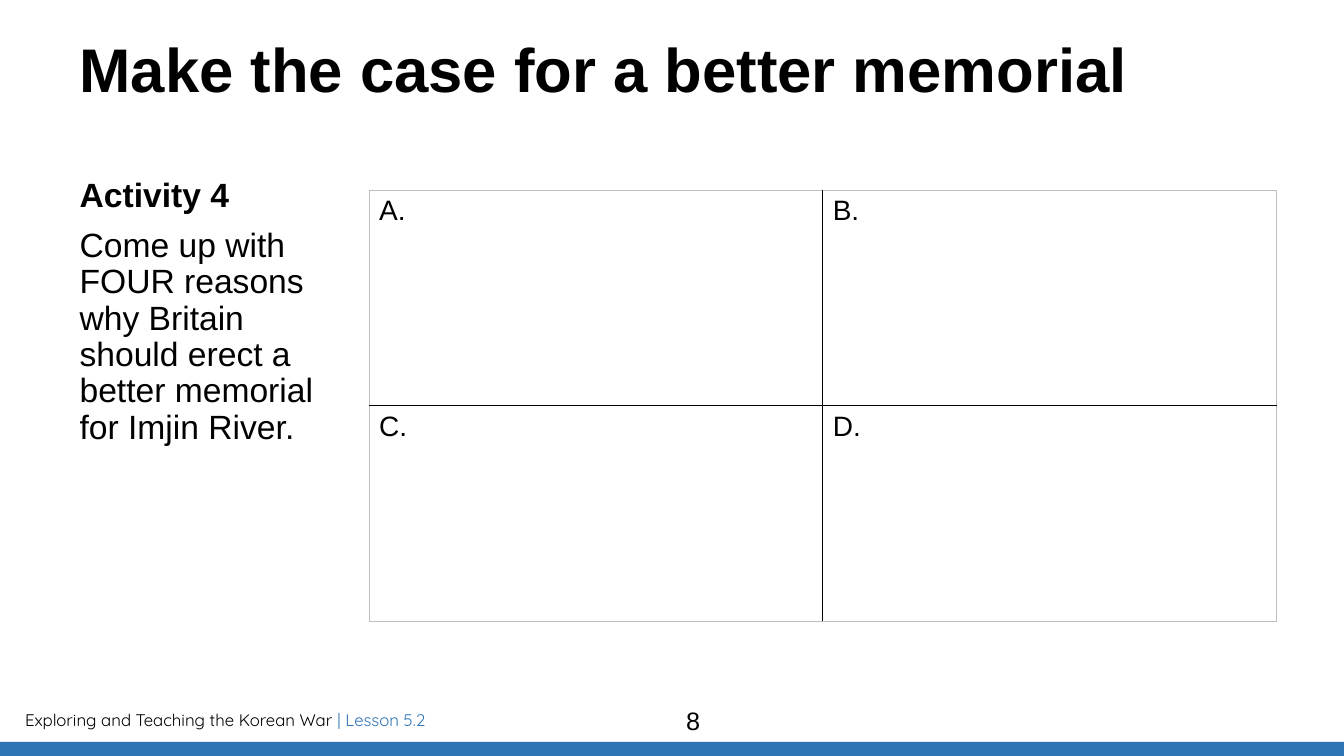
import dataclasses

import pptx
import pptx.dml.color
import pptx.enum.shapes
import pptx.enum.text
import pptx.oxml
import pptx.oxml.ns
import pptx.util

Inches = pptx.util.Inches
Pt = pptx.util.Pt
BLACK, BLUE, GREY = "000000", "2E75B6", "BFBFBF"


@dataclasses.dataclass(frozen=True)
class Area:
    left: float
    top: float
    width: float
    height: float

    def lengths(self) -> tuple:
        return tuple(Inches(n) for n in dataclasses.astuple(self))


TITLE = Area(0.79, 0.39, 11.5, 1.45)
ACTIVITY = Area(0.79, 1.77, 2.33, 4.76)
GRID = Area(3.66, 1.89, 9, 4.27)
FOOTER = Area(0.15, 6.99, 4.35, 0.3)
FOOTER_BAR = Area(0, 7.36, 13.33, 0.14)
PAGE_NUMBER = Area(4.34, 6.95, 5.07, 0.4)
REASONS = [["A.", "B."], ["C.", "D."]]


def colour(value: str):
    return pptx.dml.color.RGBColor.from_string(value)


def add_span(para, text: str, *, size: float, font: str = "Arial",
             color: str = BLACK, bold: bool = False) -> None:
    span = para.add_run()
    span.text = text
    span.font.size = Pt(size)
    span.font.name = font
    span.font.bold = bold
    span.font.color.rgb = colour(color)


def prepare_frame(frame, inset: bool = True) -> None:
    frame.word_wrap = True
    frame.auto_size = pptx.enum.text.MSO_AUTO_SIZE.NONE
    frame.vertical_anchor = pptx.enum.text.MSO_ANCHOR.TOP
    if not inset:
        frame.margin_left = frame.margin_right = 0
        frame.margin_top = frame.margin_bottom = 0


def add_box(page, area: Area, inset: bool = True):
    frame = page.shapes.add_textbox(*area.lengths()).text_frame
    prepare_frame(frame, inset)
    return frame


def set_border(cell, side: str, color: str, width: float) -> None:
    line = pptx.oxml.parse_xml(
        f'<a:{side} {pptx.oxml.ns.nsdecls("a")} w="{Pt(width)}">'
        f'<a:solidFill><a:srgbClr val="{color}"/></a:solidFill></a:{side}>')
    cell._tc.get_or_add_tcPr().append(line)


def add_title(page) -> None:
    title = page.shapes.title
    title.left, title.top, title.width, title.height = TITLE.lengths()
    prepare_frame(title.text_frame, inset=False)
    para = title.text_frame.paragraphs[0]
    para.alignment = pptx.enum.text.PP_ALIGN.LEFT
    para.line_spacing = 0.9
    add_span(para, "Make the case for a better memorial", size=44, bold=True)


def add_activity(page) -> None:
    frame = add_box(page, ACTIVITY, inset=False)
    heading, task = frame.paragraphs[0], frame.add_paragraph()
    heading.line_spacing = task.line_spacing = 0.9
    task.space_before = Pt(10)
    add_span(heading, "Activity 4", size=24, bold=True)
    add_span(task, "Come up with FOUR reasons why Britain should erect a "
             "better memorial for Imjin River.", size=24)


def add_reason_grid(page) -> None:
    rows, columns = len(REASONS), len(REASONS[0])
    table = page.shapes.add_table(rows, columns, *GRID.lengths()).table
    table.first_row = table.horz_banding = False
    for column in table.columns:
        column.width = Inches(GRID.width / columns)
    for row in table.rows:
        row.height = Inches(GRID.height / rows)
    for r, labels in enumerate(REASONS):
        for c, label in enumerate(labels):
            cell = table.cell(r, c)
            add_span(cell.text_frame.paragraphs[0], label, size=20)
            outer_sides = {"lnL": c == 0, "lnR": c == columns - 1,
                           "lnT": r == 0, "lnB": r == rows - 1}
            for side, outer in outer_sides.items():
                set_border(cell, side, GREY if outer else BLACK,
                           0.5 if outer else 1)
            cell.fill.background()


def add_footer(page) -> None:
    para = add_box(page, FOOTER).paragraphs[0]
    add_span(para, "Exploring and Teaching the Korean War ", size=12,
             font="Quicksand")
    add_span(para, "| Lesson 5.2", size=12, font="Quicksand", color=BLUE)
    bar = page.shapes.add_shape(
        pptx.enum.shapes.MSO_SHAPE.RECTANGLE, *FOOTER_BAR.lengths())
    bar.shadow.inherit = False
    bar.fill.solid()
    bar.fill.fore_color.rgb = colour(BLUE)
    bar.line.fill.background()
    number = add_box(page, PAGE_NUMBER).paragraphs[0]
    number.alignment = pptx.enum.text.PP_ALIGN.CENTER
    add_span(number, "8", size=18)


def main() -> None:
    deck = pptx.Presentation()
    deck.slide_width, deck.slide_height = Inches(13.33), Inches(7.5)
    page = deck.slides.add_slide(deck.slide_layouts.get_by_name("Title Only"))
    add_title(page)
    add_activity(page)
    add_reason_grid(page)
    add_footer(page)
    deck.save("out.pptx")


if __name__ == "__main__":
    main()
